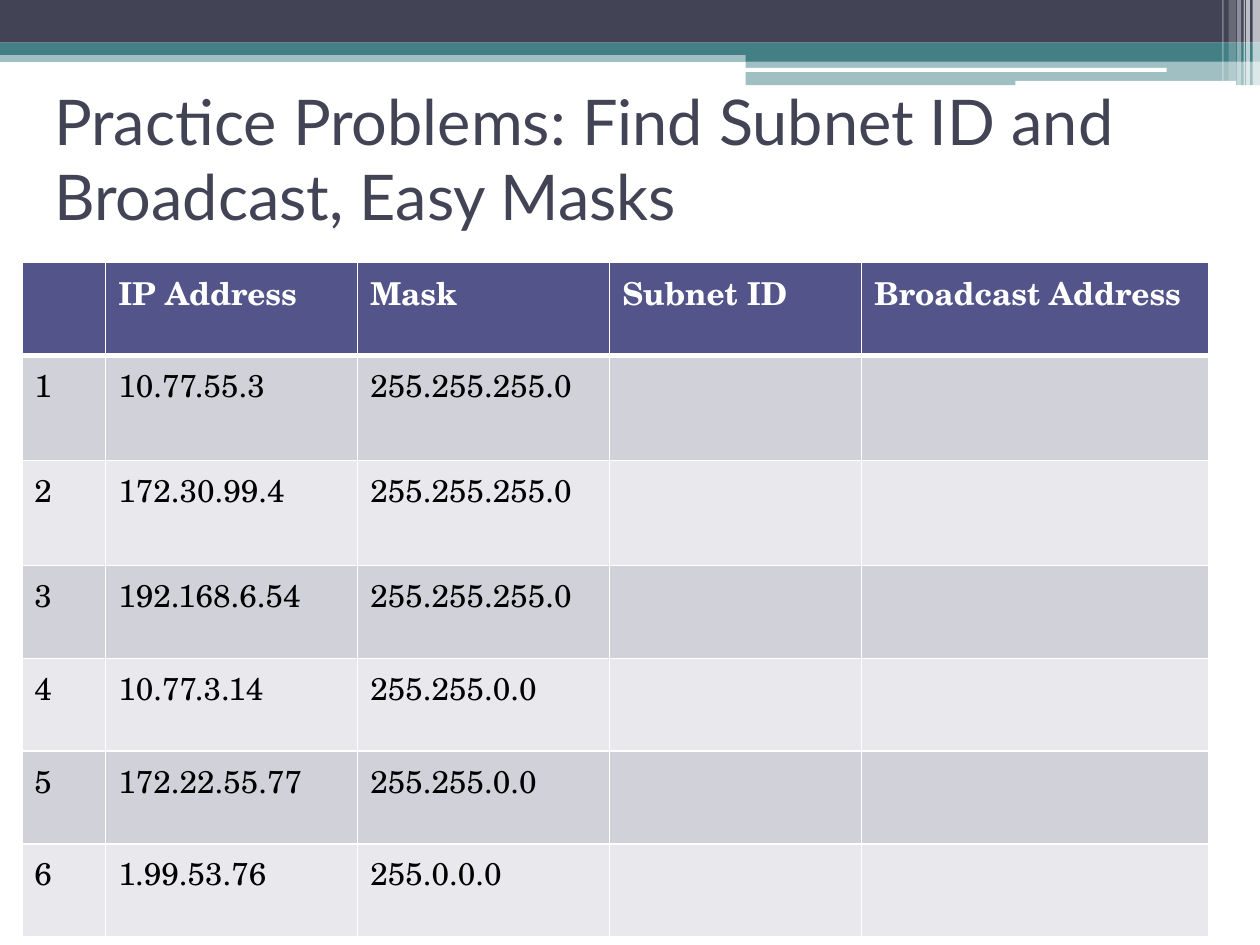
from dataclasses import dataclass

from lxml import etree
from pptx import Presentation
from pptx import util as u
from pptx.dml.color import RGBColor
from pptx.enum import shapes, text
from pptx.oxml import ns


@dataclass(frozen=True)
class Theme:
    dark: str = "424456"
    teal: str = "438086"
    white: str = "FFFFFF"
    black: str = "000000"
    header: str = "53548A"
    bands: tuple = ("D1D1DA", "E9E9ED")
    title_font: str = "Lato"
    body_font: str = "TeX Gyre Schola"
    title_size: int = 36
    body_size: int = 18


theme = Theme()
RECT = shapes.MSO_SHAPE.RECTANGLE
ROUND = shapes.MSO_SHAPE.ROUNDED_RECTANGLE

deck = Presentation()
deck.slide_width, deck.slide_height = u.Cm(25.4), u.Cm(19.05)
page = deck.slides.add_slide(deck.slide_layouts[5])


def add_bar(kind, left, top, width, height, color, opacity=100):
    """Draw a borderless bar; lengths in cm, opacity in percent."""
    bar = page.shapes.add_shape(kind, u.Cm(left), u.Cm(top), u.Cm(width), u.Cm(height))
    bar.shadow.inherit = False
    bar.fill.solid()
    bar.fill.fore_color.rgb = RGBColor.from_string(color)
    bar.line.fill.background()
    if opacity < 100:
        tint = bar.fill._xPr.find(".//" + ns.qn("a:srgbClr"))
        etree.SubElement(tint, ns.qn("a:alpha"), val=str(opacity * 1000))


def add_border(cell, side, points):
    """Add a white border; sides must come in the order L, R, T, B, before the fill."""
    props = cell._tc.get_or_add_tcPr()
    line = etree.SubElement(props, ns.qn(f"a:ln{side}"), w=str(u.Pt(points)))
    fill = etree.SubElement(line, ns.qn("a:solidFill"))
    etree.SubElement(fill, ns.qn("a:srgbClr"), val=theme.white)


# Banner
for bar in [
    (RECT, 0, 1.02, 25.4, 0.23, theme.teal, 50),
    (RECT, 0, 0, 25.4, 0.86, theme.dark),
    (RECT, 0, 0.86, 25.4, 0.25, theme.teal),
    (RECT, 15.03, 0.99, 10.37, 0.25, theme.teal),
    (RECT, 15.03, 1.22, 10.37, 0.5, theme.teal, 50),
    (ROUND, 15.01, 1.37, 8.51, 0.08, theme.white),
    (ROUND, 20.47, 1.63, 4.45, 0.1, theme.white),
]:
    add_bar(*bar)

# Light stripes at the right end of the banner
for left, width, height, opacity in [
    (25.25, 0.15, 1.73, 65),
    (25.12, 0.08, 1.73, 65),
    (25.07, 0.03, 1.73, 60),
    (24.94, 0.08, 1.73, 40),
    (24.77, 0.15, 1.63, 20),
    (24.64, 0.03, 1.63, 30),
]:
    add_bar(RECT, left, 0, width, height, theme.white, opacity)

# Title, in front of the banner
title = page.shapes.title
page.shapes.element.append(title.element)
title.left, title.top, title.width, title.height = u.Cm(0.84), u.Cm(1.7), u.Cm(22.86), u.Cm(2.97)
title.text_frame.text = "Practice Problems: Find Subnet ID and Broadcast, Easy Masks"
title.text_frame.word_wrap = True
title.text_frame.auto_size = text.MSO_AUTO_SIZE.NONE
title.text_frame.vertical_anchor = text.MSO_ANCHOR.MIDDLE
para = title.text_frame.paragraphs[0]
para.alignment = text.PP_ALIGN.LEFT
span = para.runs[0]
span.font.name = theme.title_font
span.font.size = u.Pt(theme.title_size)
span.font.color.rgb = RGBColor.from_string(theme.dark)

# Table of problems
problems = [
    ("10.77.55.3", "255.255.255.0"),
    ("172.30.99.4", "255.255.255.0"),
    ("192.168.6.54", "255.255.255.0"),
    ("10.77.3.14", "255.255.0.0"),
    ("172.22.55.77", "255.255.0.0"),
    ("1.99.53.76", "255.0.0.0"),
]
rows = [("", "IP Address", "Mask", "Subnet ID", "Broadcast Address")]
rows += [(str(n), address, mask, "", "") for n, (address, mask) in enumerate(problems, 1)]
widths = [1.69, 5.08, 5.08, 5.08, 6.99]
heights = [1.87, 2.12, 2.12] + [1.87] * 4

frame = page.shapes.add_table(
    len(rows), len(widths), u.Cm(0.44), u.Cm(5.29), u.Cm(sum(widths)), u.Cm(sum(heights))
)
table = frame.table
for column, width in zip(table.columns, widths):
    column.width = u.Cm(width)

for r, values in enumerate(rows):
    table.rows[r].height = u.Cm(heights[r])
    is_header = r == 0
    fill_color = theme.header if is_header else theme.bands[(r - 1) % 2]
    text_color = theme.white if is_header else theme.black
    for c, value in enumerate(values):
        cell = table.cell(r, c)
        for side in "LRTB":
            heavy = (r, side) in ((0, "B"), (1, "T"))
            add_border(cell, side, 3 if heavy else 1)
        cell.fill.solid()
        cell.fill.fore_color.rgb = RGBColor.from_string(fill_color)
        cell.text_frame.text = value
        for span in cell.text_frame.paragraphs[0].runs:
            span.font.name = theme.body_font
            span.font.size = u.Pt(theme.body_size)
            span.font.bold = is_header
            span.font.color.rgb = RGBColor.from_string(text_color)

deck.save("out.pptx")
